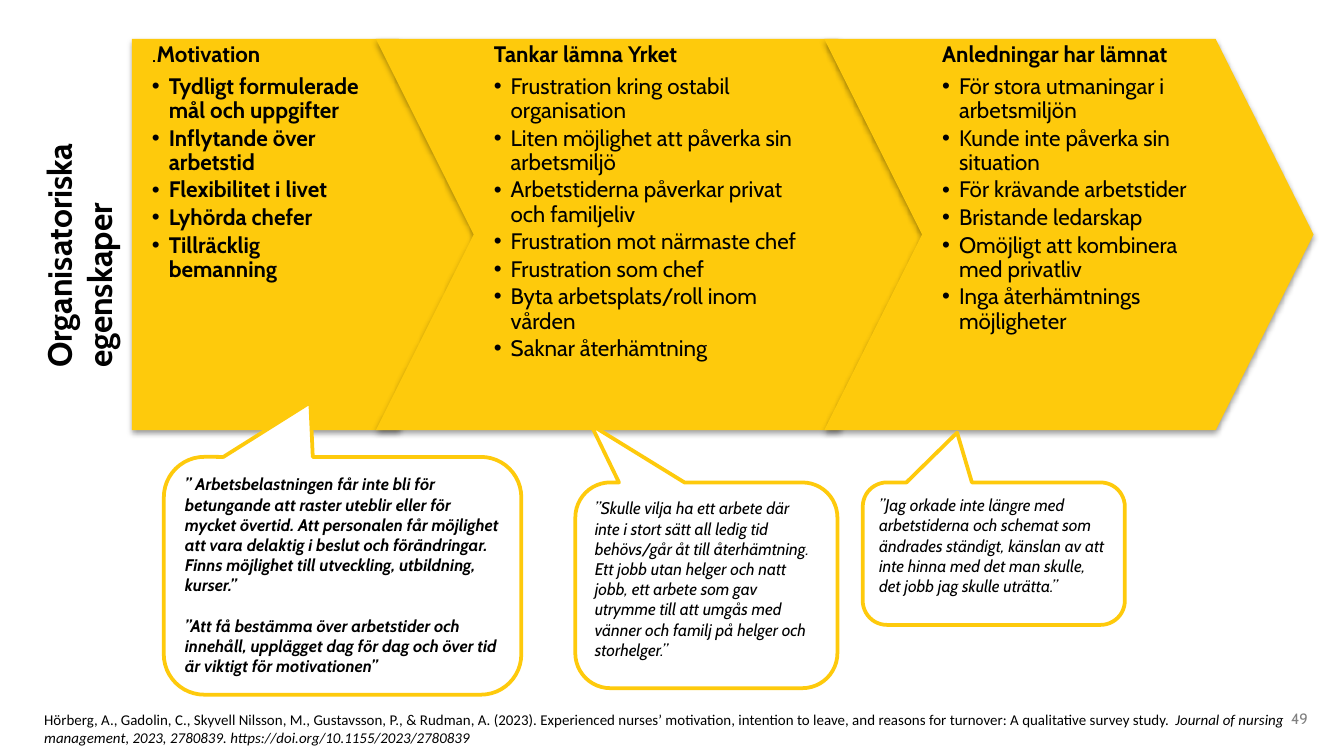
from lxml.etree import SubElement
from pptx import Presentation
from pptx.dml.color import RGBColor
from pptx.enum.shapes import MSO_SHAPE
from pptx.enum.text import MSO_ANCHOR, PP_ALIGN
from pptx.oxml.ns import qn
from pptx.util import Pt

YELLOW = RGBColor(0xFE, 0xCA, 0x0C)
WHITE = RGBColor(0xFF, 0xFF, 0xFF)
BLACK = RGBColor(0, 0, 0)
GREY = RGBColor(0x80, 0x80, 0x80)

ARROW_TOP, ARROW_HEIGHT, ARROW_OVERLAP = 20.9, 209.5, 60
ARROW_POINT = ARROW_HEIGHT / 4

# Shape, width, text left offset, text width, right inset, bold bullets, heading runs, bullets
STAGES = [
    (MSO_SHAPE.PENTAGON, 190.8, 0, 167, 42.5, True,
     [(".", False), ("Motivation", True)],
     ["Tydligt formulerade mål och uppgifter", "Inflytande över arbetstid",
      "Flexibilitet i livet", "Lyhörda chefer", "Tillräcklig bemanning"]),
    (MSO_SHAPE.CHEVRON, 300.2, ARROW_POINT, 300.2 - 2 * ARROW_POINT, 10.8, False,
     [("Tankar lämna Yrket", True)],
     ["Frustration kring ostabil organisation",
      "Liten möjlighet att påverka sin arbetsmiljö",
      "Arbetstiderna påverkar privat och familjeliv",
      "Frustration mot närmaste chef", "Frustration som chef",
      "Byta arbetsplats/roll inom vården", "Saknar återhämtning"]),
    (MSO_SHAPE.CHEVRON, 262.1, ARROW_POINT, 262.1 - 2 * ARROW_POINT, 10.8, False,
     [("Anledningar har lämnat", True)],
     ["För stora utmaningar i arbetsmiljön", "Kunde inte påverka sin situation",
      "För krävande arbetstider", "Bristande ledarskap",
      "Omöjligt att kombinera med privatliv", "Inga återhämtnings möjligheter"]),
]

# Box, pointer position, bold, paragraphs
QUOTES = [
    ((87.8, 244.8, 191.5, 127.4), (-0.09, -0.73), True,
     ["” Arbetsbelastningen får inte bli för betungande att raster uteblir eller för "
      "mycket övertid. Att personalen får möjlighet att vara delaktig i beslut och "
      "förändringar. Finns möjlighet till utveckling, utbildning, kurser.”",
      "”Att få bestämma över arbetstider och innehåll, upplägget dag för dag och över "
      "tid är viktigt för motivationen”"]),
    ((308.2, 258.5, 140.4, 110.2), (-0.44, -0.78), False,
     ["”Skulle vilja ha ett arbete där inte i stort sätt all ledig tid behövs/går åt "
      "till återhämtning. Ett jobb utan helger och natt jobb, ett arbete som gav "
      "utrymme till att umgås med vänner och familj på helger och storhelger.”"]),
    ((462.2, 258.5, 140.4, 76.3), (-0.14, -0.85), False,
     ["”Jag orkade inte längre med arbetstiderna och schemat som ändrades ständigt, "
      "känslan av att inte hinna med det man skulle, det jobb jag skulle uträtta.”"]),
]


def points(box):
    return [Pt(length) for length in box]


def add_run(para, text, size, bold=False, italic=False, color=BLACK, font="Cabin"):
    span = para.add_run()
    span.text = text
    span.font.name = font
    span.font.size = Pt(size)
    span.font.bold = bold
    span.font.italic = italic
    span.font.color.rgb = color


def set_frame(frame, insets, anchor=MSO_ANCHOR.TOP):
    """Wrap the text and set its left, top, right and bottom insets."""
    frame.word_wrap = True
    frame.vertical_anchor = anchor
    (frame.margin_left, frame.margin_top,
     frame.margin_right, frame.margin_bottom) = points(insets)


def next_paragraph(frame, index):
    return frame.add_paragraph() if index else frame.paragraphs[0]


def add_soft_shadow(shape):
    effects = SubElement(shape._element.spPr, qn("a:effectLst"))
    shadow = SubElement(effects, qn("a:outerShdw"), blurRad=str(Pt(3.1)),
                        dist=str(Pt(1.6)), dir="5400000", rotWithShape="0")
    color = SubElement(shadow, qn("a:srgbClr"), val=str(BLACK))
    SubElement(color, qn("a:alpha"), val="38000")


def make_bullet(para):
    para.level = 1
    properties = para._p.get_or_add_pPr()
    properties.set("marL", str(Pt(9)))
    properties.set("indent", str(Pt(-9)))
    SubElement(properties, qn("a:buFont"), typeface="Arial")
    SubElement(properties, qn("a:buChar"), char="•")


def add_stage(group, left, stage):
    kind, width, offset, text_width, right_inset, bold, heading, bullets = stage
    arrow = group.shapes.add_shape(
        kind, *points((left, ARROW_TOP, width, ARROW_HEIGHT)))
    arrow.adjustments[0] = 0.25
    arrow.fill.solid()
    arrow.fill.fore_color.rgb = YELLOW
    arrow.line.fill.background()
    add_soft_shadow(arrow)

    label = group.shapes.add_textbox(
        *points((left + offset, ARROW_TOP, text_width, ARROW_HEIGHT)))
    frame = label.text_frame
    set_frame(frame, (10.8, 2.2, right_inset, 2.2))
    rows = [heading] + [[(text, bold)] for text in bullets]
    for index, row in enumerate(rows):
        para = next_paragraph(frame, index)
        para.line_spacing = 0.9
        para.space_after = Pt(1.8 if index else 4.2)
        if index:
            make_bullet(para)
        for text, is_bold in row:
            add_run(para, text, 12, is_bold)


def add_stages(page, left):
    group = page.shapes.add_group_shape()
    for stage in STAGES:
        add_stage(group, left, stage)
        left += stage[1] - ARROW_OVERLAP


def add_quote(page, box, pointer, bold, paragraphs):
    bubble = page.shapes.add_shape(MSO_SHAPE.ROUNDED_RECTANGULAR_CALLOUT, *points(box))
    bubble.adjustments[0], bubble.adjustments[1] = pointer
    bubble.adjustments[2] = 0.17
    bubble.shadow.inherit = False
    bubble.fill.solid()
    bubble.fill.fore_color.rgb = WHITE
    bubble.line.color.rgb = YELLOW
    bubble.line.width = Pt(2)
    set_frame(bubble.text_frame, (5, 2.9, 5, 2.9))
    for index, text in enumerate(paragraphs):
        para = next_paragraph(bubble.text_frame, index)
        para.alignment = PP_ALIGN.LEFT
        if index:
            para.space_before = Pt(10.9)
        add_run(para, text, 9, bold, italic=True)


def add_side_title(page, box):
    title = page.shapes.add_textbox(*points(box))
    title.rotation = 270
    set_frame(title.text_frame, (7.2, 3.6, 7.2, 3.6))
    for index, text in enumerate(("Organisatoriska", "egenskaper")):
        add_run(next_paragraph(title.text_frame, index), text, 18, bold=True)


def add_reference(page, box):
    reference = page.shapes.add_shape(MSO_SHAPE.RECTANGLE, *points(box))
    reference.shadow.inherit = False
    reference.fill.background()
    reference.line.color.rgb = WHITE
    reference.line.width = Pt(0.5)
    set_frame(reference.text_frame, (7.2, 3.6, 7.2, 3.6))
    para = reference.text_frame.paragraphs[0]
    para.alignment = PP_ALIGN.LEFT
    add_run(para, "Hörberg, A., Gadolin, C., Skyvell Nilsson, M., Gustavsson, P., & Rudman, A. "
            "(2023). Experienced nurses’ motivation, intention to leave, and reasons for "
            "turnover: A qualitative survey study. ", 8, font="Calibri")
    add_run(para, "Journal of nursing management, 2023, 2780839. "
            "https://doi.org/10.1155/2023/2780839", 8, italic=True, font="Calibri")


def add_page_number(page, box):
    number = page.shapes.add_textbox(*points(box))
    set_frame(number.text_frame, (7.2, 0, 7.2, 0), MSO_ANCHOR.MIDDLE)
    para = number.text_frame.paragraphs[0]
    para.alignment = PP_ALIGN.RIGHT
    add_run(para, "49", 8, color=GREY)


def main():
    deck = Presentation()
    deck.slide_width, deck.slide_height = Pt(720), Pt(405)
    page = deck.slides.add_slide(deck.slide_layouts[6])
    add_page_number(page, (653.8, 378, 54, 13.7))
    add_side_title(page, (-36.7, 99.4, 158.4, 51.1))
    add_stages(page, 70.6)
    for quote in QUOTES:
        add_quote(page, *quote)
    add_reference(page, (16.6, 377.3, 709.9, 26.6))
    deck.save("out.pptx")


if __name__ == "__main__":
    main()
